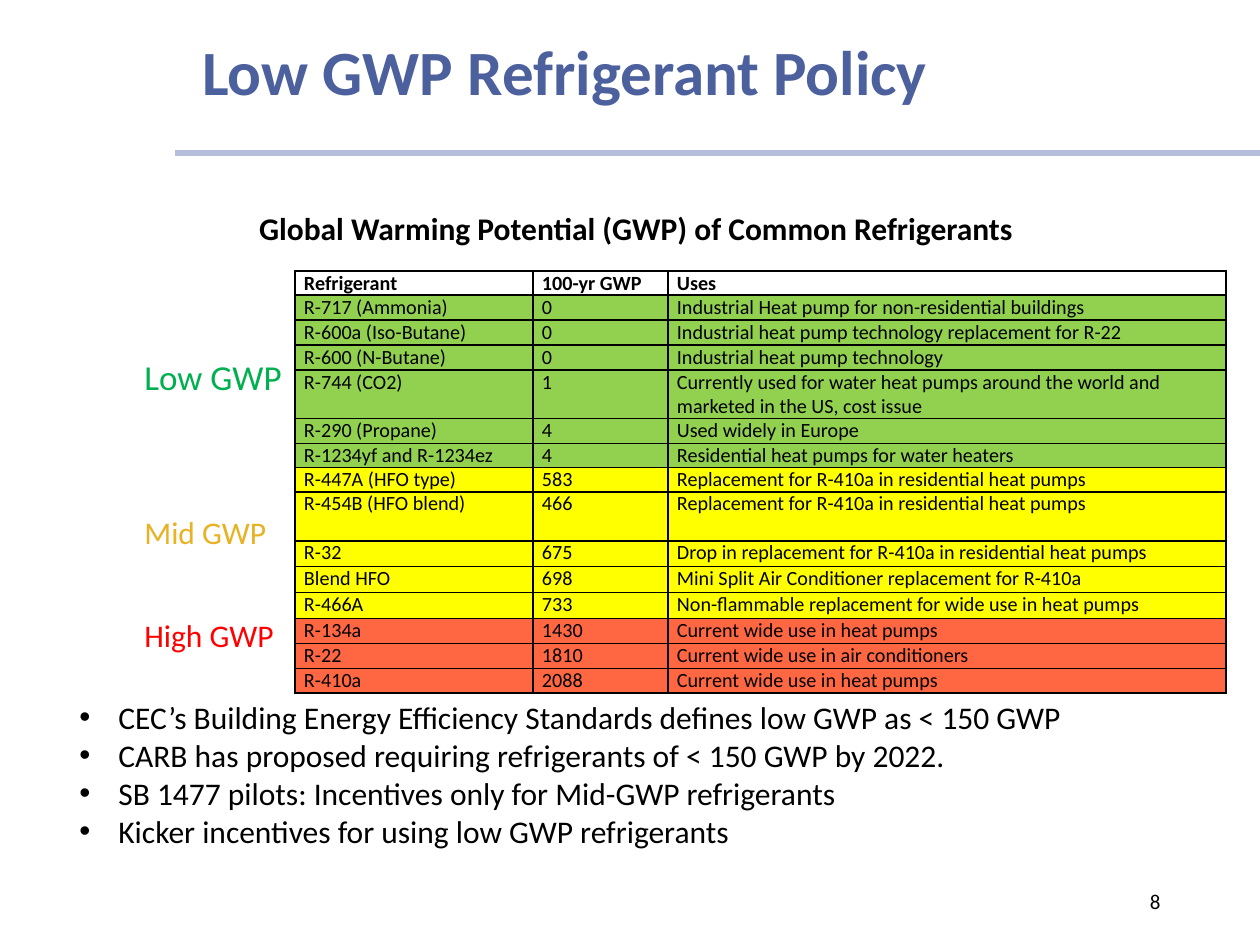
from dataclasses import dataclass

from lxml import etree
from pptx import Presentation
from pptx.dml.color import RGBColor
from pptx.enum.shapes import MSO_CONNECTOR
from pptx.enum.text import MSO_ANCHOR, PP_ALIGN
from pptx.oxml import parse_xml
from pptx.oxml.ns import nsdecls, qn
from pptx.util import Emu, Pt

LEFT, CENTER, RIGHT = PP_ALIGN.LEFT, PP_ALIGN.CENTER, PP_ALIGN.RIGHT
TOP, MIDDLE = MSO_ANCHOR.TOP, MSO_ANCHOR.MIDDLE
STRAIGHT = MSO_CONNECTOR.STRAIGHT


@dataclass(frozen=True)
class Theme:
    font: str = "Calibri"
    text: str = "000000"
    title: str = "4C609E"
    rule: str = "B4BEDB"
    low_label: str = "00B050"
    mid_label: str = "E9B124"
    high_label: str = "FF0000"
    low_fill: str = "92D050"
    mid_fill: str = "FFFF00"
    high_fill: str = "FF6743"
    title_size: float = 36
    large_size: float = 20
    body_size: float = 18
    number_size: float = 12
    table_size: float = 11.5


T = Theme()

# Content
TITLE = "Low GWP Refrigerant Policy"
SUBTITLE = "Global Warming Potential (GWP) of Common Refrigerants"
PAGE_NUMBER = "8"
HEADER = ("Refrigerant", "100-yr GWP", "Uses")
GROUPS = [
    (T.low_fill, [
        ("R-717 (Ammonia)", "0", "Industrial Heat pump for non-residential buildings"),
        ("R-600a (Iso-Butane)", "0", "Industrial heat pump technology replacement for R-22"),
        ("R-600 (N-Butane)", "0", "Industrial heat pump technology"),
        ("R-744 (CO2)", "1", "Currently used for water heat pumps around the world "
                             "and marketed in the US, cost issue"),
        ("R-290 (Propane)", "4", "Used widely in Europe"),
        ("R-1234yf and R-1234ez", "4", "Residential heat pumps for water heaters"),
    ]),
    (T.mid_fill, [
        ("R-447A (HFO type)", "583", "Replacement for R-410a in residential heat pumps"),
        ("R-454B (HFO blend)", "466", "Replacement for R-410a in residential heat pumps"),
        ("R-32", "675", "Drop in replacement for R-410a in residential heat pumps"),
        ("Blend HFO", "698", "Mini Split Air Conditioner replacement for R-410a"),
        ("R-466A", "733", "Non-flammable replacement for wide use in heat pumps"),
    ]),
    (T.high_fill, [
        ("R-134a", "1430", "Current wide use in heat pumps"),
        ("R-22", "1810", "Current wide use in air conditioners"),
        ("R-410a", "2088", "Current wide use in heat pumps"),
    ]),
]
BULLETS = [
    "CEC’s Building Energy Efficiency Standards defines low GWP as < 150 GWP",
    "CARB has proposed requiring refrigerants of < 150 GWP by 2022.",
    "SB 1477 pilots: Incentives only for Mid-GWP refrigerants",
    "Kicker incentives for using low GWP refrigerants",
]
LABELS = [  # text, top, width, height, size, colour
    ("Low GWP", 349, 202, 55, T.large_size, T.low_label),
    ("Mid GWP", 507, 215, 50, T.body_size, T.mid_label),
    ("High GWP", 610, 215, 50, T.body_size, T.high_label),
]

# Layout in px
SLIDE_W, SLIDE_H = 1260, 945
RULE_X, RULE_Y = 175, 153
LABEL_X = 132
TABLE_X, TABLE_Y = 295, 271
COL_WIDTHS = (238, 135, 558)
ROW_HEIGHTS = (24, 25, 25, 25, 48, 25, 24, 24, 49, 26, 26, 26, 25, 25, 24)
CELL_INSET = 9
BULLET_INDENT = 39


def px(n):
    return Emu(round(n * 914400 / 126))


def style_font(font, size, color=T.text, bold=False):
    for name, value in dict(name=T.font, size=Pt(size), bold=bold).items():
        setattr(font, name, value)
    font.color.rgb = RGBColor.from_string(color)


def add_text(slide, box, lines, size, color=T.text, bold=False,
             align=LEFT, anchor=TOP, spacing=None, bulleted=False):
    tf = slide.shapes.add_textbox(*map(px, box)).text_frame
    tf.word_wrap = True
    tf.vertical_anchor = anchor
    for i, line in enumerate(lines):
        p = tf.paragraphs[0] if i == 0 else tf.add_paragraph()
        p.alignment = align
        p.line_spacing = spacing
        if bulleted:
            pPr = p._p.get_or_add_pPr()
            pPr.set("marL", str(px(BULLET_INDENT)))
            pPr.set("indent", str(-px(BULLET_INDENT)))
            etree.SubElement(pPr, qn("a:buFont")).set("typeface", "Arial")
            etree.SubElement(pPr, qn("a:buChar")).set("char", "•")
        r = p.add_run()
        r.text = line
        style_font(r.font, size, color, bold)


def fill_cell(cell, text, fill, bold):
    margins = dict(margin_left=px(CELL_INSET), margin_right=px(CELL_INSET),
                   margin_top=0, margin_bottom=0)
    for name, value in margins.items():
        setattr(cell, name, value)
    tcPr = cell._tc.get_or_add_tcPr()
    for side in "LRTB":
        tcPr.append(parse_xml(
            f'<a:ln{side} {nsdecls("a")} w="{Pt(1)}"><a:solidFill>'
            f'<a:srgbClr val="{T.text}"/></a:solidFill></a:ln{side}>'))
    if fill:
        cell.fill.solid()
        cell.fill.fore_color.rgb = RGBColor.from_string(fill)
    else:
        cell.fill.background()
    r = cell.text_frame.paragraphs[0].add_run()
    r.text = text
    style_font(r.font, T.table_size, bold=bold)


def add_refrigerant_table(slide):
    rows = [(None, HEADER)] + [(fill, row) for fill, group in GROUPS for row in group]
    table = slide.shapes.add_table(
        len(rows), len(HEADER), px(TABLE_X), px(TABLE_Y),
        px(sum(COL_WIDTHS)), px(sum(ROW_HEIGHTS))).table
    table.first_row = table.horz_banding = False
    for column, width in zip(table.columns, COL_WIDTHS):
        column.width = px(width)
    for i, (fill, values) in enumerate(rows):
        table.rows[i].height = px(ROW_HEIGHTS[i])
        for j, value in enumerate(values):
            fill_cell(table.cell(i, j), value, fill, bold=i == 0)


def main():
    prs = Presentation()
    prs.slide_width, prs.slide_height = px(SLIDE_W), px(SLIDE_H)
    s = prs.slides.add_slide(prs.slide_layouts[6])

    # Rule, page number and headings
    rule = s.shapes.add_connector(STRAIGHT, px(RULE_X), px(RULE_Y), px(SLIDE_W), px(RULE_Y))
    rule.line.color.rgb = RGBColor.from_string(T.rule)
    rule.line.width = Pt(3)
    etree.SubElement(rule._element.spPr, qn("a:effectLst"))
    add_text(s, (890, 876, 283, 50), [PAGE_NUMBER], T.number_size, align=RIGHT, anchor=MIDDLE)
    add_text(s, (190, 18, 1018, 115), [TITLE], T.title_size, T.title, True,
             anchor=MIDDLE, spacing=0.9)
    add_text(s, (67, 203, 1138, 50), [SUBTITLE], T.body_size, bold=True, align=CENTER)

    # Table, policy bullets and group labels
    add_refrigerant_table(s)
    add_text(s, (67, 692, 1012, 165), BULLETS, T.body_size, bulleted=True)
    for text, top, width, height, size, color in LABELS:
        add_text(s, (LABEL_X, top, width, height), [text], size, color)

    prs.save("out.pptx")


if __name__ == "__main__":
    main()
